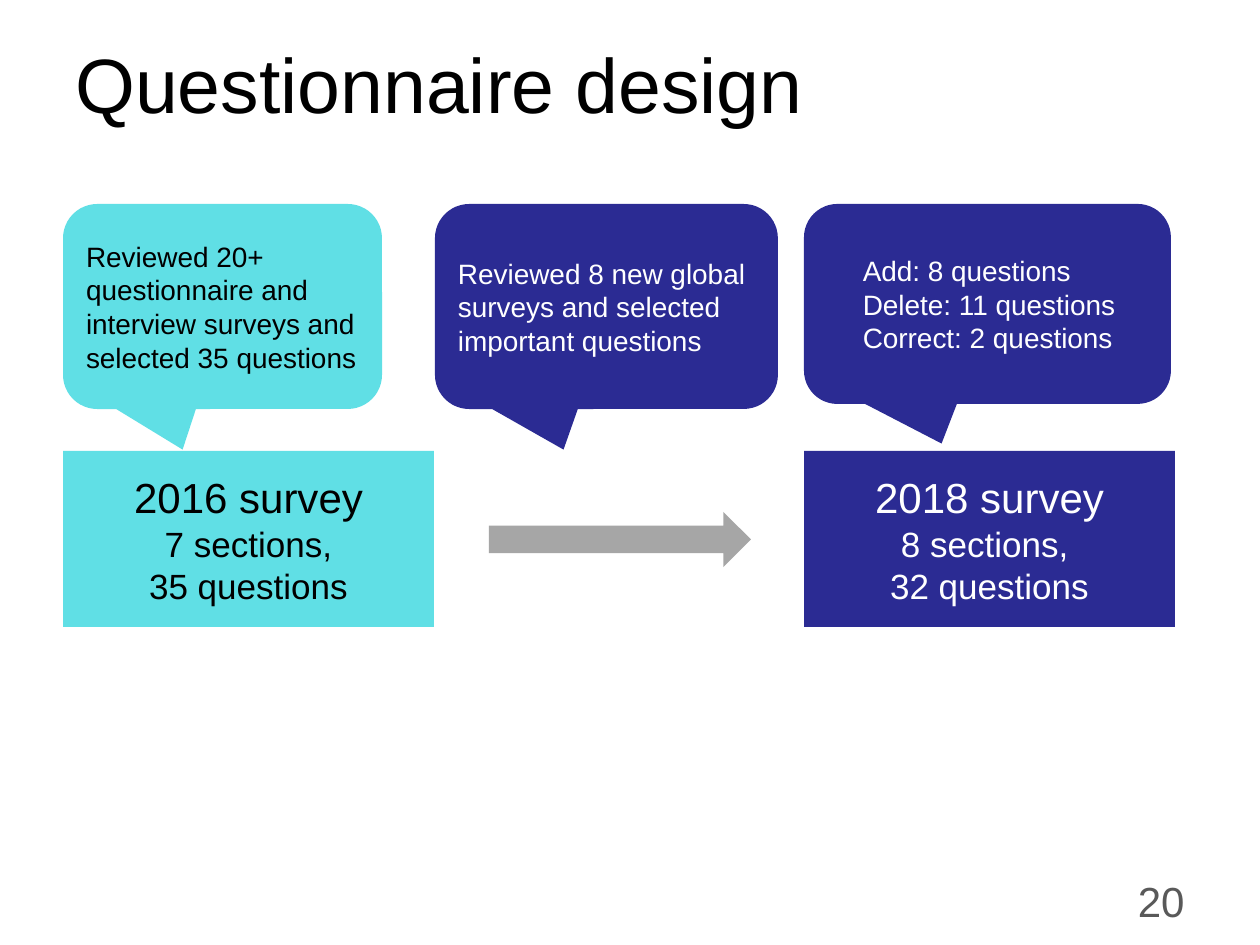
from pptx import Presentation
from pptx.dml.color import RGBColor
from pptx.enum.shapes import MSO_SHAPE as Shape
from pptx.enum.text import MSO_ANCHOR as Anchor, PP_ALIGN as Align
from pptx.util import Emu, Pt

EMU_PER_PX = 914400 / 126
COLORS = {
    "cyan": "60DFE5",
    "navy": "2B2B93",
    "arrow": "A6A6A6",
    "black": "000000",
    "white": "FFFFFF",
    "page": "595959",
}


def px(*lengths):
    """Turn px lengths into a list of EMU lengths."""
    return [Emu(round(length * EMU_PER_PX)) for length in lengths]


def write(shape, lines, color, align=Align.LEFT):
    """Fill a shape with (text, size) lines, one paragraph each."""
    frame = shape.text_frame
    frame.word_wrap = True
    frame.vertical_anchor = Anchor.MIDDLE
    for i, (text, size) in enumerate(lines):
        paragraph = frame.add_paragraph() if i else frame.paragraphs[0]
        paragraph.alignment = align
        run = paragraph.add_run()
        run.text = text
        run.font.name = "Arial"
        run.font.size = Pt(size)
        run.font.color.rgb = RGBColor.from_string(COLORS[color])


prs = Presentation()
prs.slide_width, prs.slide_height = px(1260, 945)
slide = prs.slides.add_slide(prs.slide_layouts[6])
shapes = slide.shapes

title = shapes.add_textbox(*px(63, 4, 1134, 157))
write(title, [("Questionnaire design", 44)], "black")
page_number = shapes.add_textbox(*px(903, 876, 294, 50))
write(page_number, [("20", 24)], "page", Align.RIGHT)

# Survey boxes
surveys = [
    (63, "cyan", "black", ["2016 survey", "7 sections,", "35 questions"]),
    (804, "navy", "white", ["2018 survey", "8 sections, ", "32 questions"]),
]
filled = []
for left, fill, ink, lines in surveys:
    survey = shapes.add_shape(Shape.RECTANGLE, *px(left, 451, 371, 176))
    write(survey, zip(lines, (24, 20, 20)), ink, Align.CENTER)
    filled.append((survey, fill))

arrow = shapes.add_shape(Shape.RIGHT_ARROW, *px(489, 512, 262, 55))
filled.append((arrow, "arrow"))

# Callouts: left, width, height, left inset, fill, ink, lines
callouts = [
    (63, 319, 205, 13, "cyan", "black",
     ["Reviewed 20+ questionnaire and interview surveys and selected 35 questions"]),
    (804, 367, 200, 49, "navy", "white",
     ["Add: 8 questions", "Delete: 11 questions", "Correct: 2 questions"]),
    (435, 343, 205, 13, "navy", "white",
     ["Reviewed 8 new global surveys and selected important questions"]),
]
for left, width, height, inset, fill, ink, lines in callouts:
    callout = shapes.add_shape(Shape.ROUNDED_RECTANGULAR_CALLOUT, *px(left, 204, width, height))
    for i, value in enumerate((-0.125, 0.698, 0.167)):
        callout.adjustments[i] = value
    callout.text_frame.margin_left = px(inset)[0]
    write(callout, [(line, 16) for line in lines], ink)
    filled.append((callout, fill))

for shape, fill in filled:
    shape.shadow.inherit = False
    shape.fill.solid()
    shape.fill.fore_color.rgb = RGBColor.from_string(COLORS[fill])
    shape.line.fill.background()

prs.save("out.pptx")
